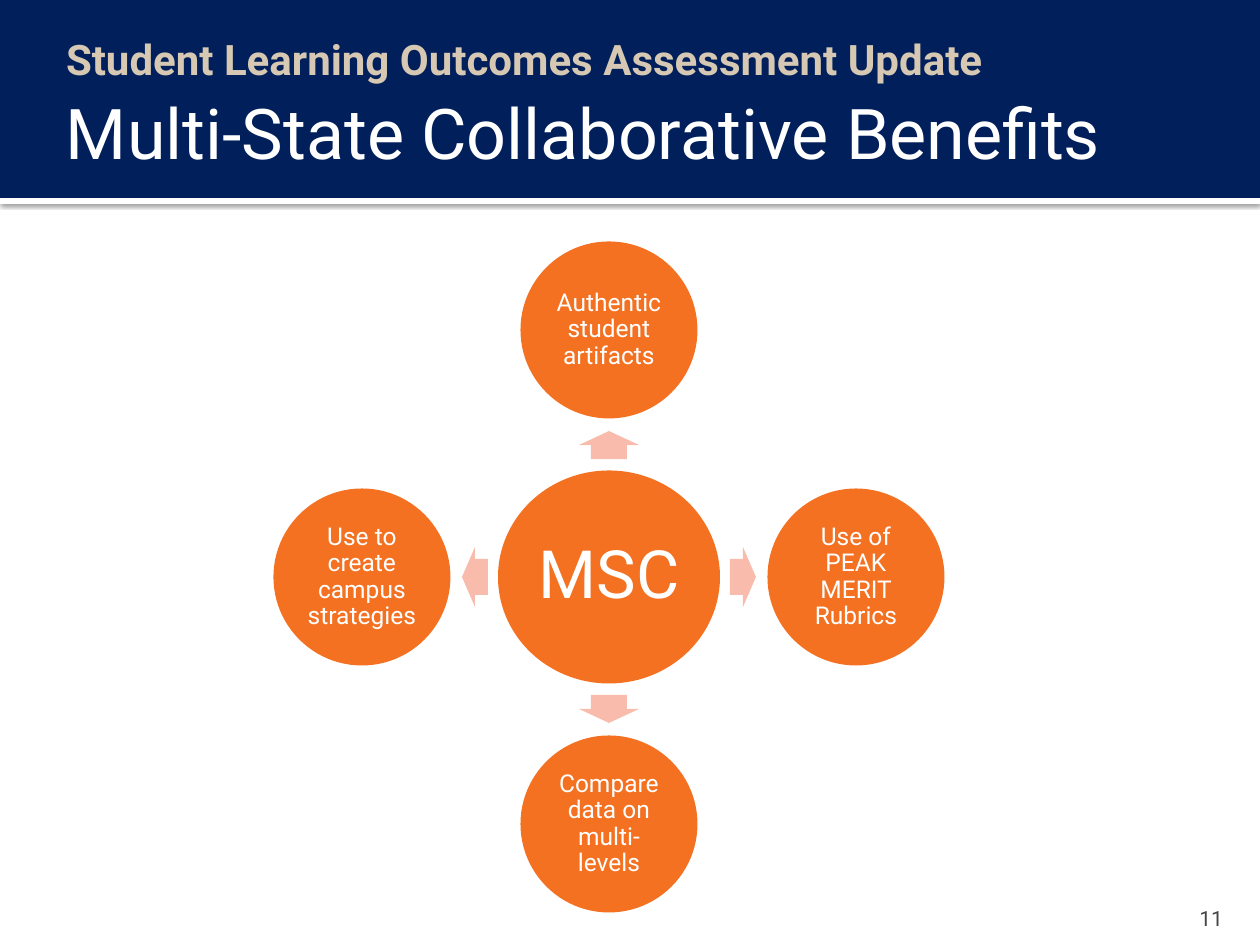
"""Build the Multi-State Collaborative benefits slide."""
from dataclasses import dataclass

from pptx import Presentation
from pptx.dml.color import RGBColor
from pptx.enum.shapes import MSO_SHAPE
from pptx.enum.text import MSO_ANCHOR, PP_ALIGN
from pptx.oxml import parse_xml
from pptx.util import Emu, Pt

RECT, OVAL, ARROW = MSO_SHAPE.RECTANGLE, MSO_SHAPE.OVAL, MSO_SHAPE.RIGHT_ARROW
TOP, MIDDLE, BOTTOM = MSO_ANCHOR.TOP, MSO_ANCHOR.MIDDLE, MSO_ANCHOR.BOTTOM
LEFT, CENTER, RIGHT = PP_ALIGN.LEFT, PP_ALIGN.CENTER, PP_ALIGN.RIGHT
EMU_PER_PX = 914400 / 126
WIDTH, HEIGHT = 1260, 945
SHADOW = (
    '<a:effectLst xmlns:a="http://schemas.openxmlformats.org/drawingml/2006/main">'
    '<a:outerShdw blurRad="31750" dist="10160" dir="5400000" rotWithShape="0">'
    '<a:srgbClr val="000000"><a:alpha val="60000"/></a:srgbClr>'
    '</a:outerShdw></a:effectLst>'
)


@dataclass(frozen=True)
class Theme:
    font: str = "Roboto"
    navy: str = "001F5B"
    white: str = "FFFFFF"
    sand: str = "D6C8B2"
    grey: str = "454545"
    orange: str = "F37121"
    peach: str = "F8BBAC"
    title: int = 40
    hub: int = 38
    kicker: int = 24
    label: int = 14
    number: int = 12


def px(n):
    return Emu(round(n * EMU_PER_PX))


def write(sp, text, font, size, color, bold=False, align=LEFT, anchor=MIDDLE,
          insets=(0, 0, 0, 0), spacing=None):
    tf = sp.text_frame
    tf.word_wrap = True
    tf.vertical_anchor = anchor
    tf.margin_left, tf.margin_top, tf.margin_right, tf.margin_bottom = map(px, insets)
    p = tf.paragraphs[0]
    p.alignment = align
    if spacing:
        p.line_spacing = spacing
    r = p.add_run()
    r.text = text
    r.font.name, r.font.size, r.font.bold = font, Pt(size), bold
    r.font.color.rgb = RGBColor.from_string(color)


class Deck:
    def __init__(self, theme):
        self.theme = theme
        self.prs = Presentation()
        self.prs.slide_width, self.prs.slide_height = px(WIDTH), px(HEIGHT)
        self.s = self.prs.slides.add_slide(self.prs.slide_layouts[6])

    def shape(self, kind, x, y, w, h, color):
        sp = self.s.shapes.add_shape(kind, px(x), px(y), px(w), px(h))
        sp.shadow.inherit = False
        sp.fill.solid()
        sp.fill.fore_color.rgb = RGBColor.from_string(color)
        sp.line.fill.background()
        return sp

    def shadowed_rule(self, y, h):
        sp = self.shape(RECT, 0, y, WIDTH, h, self.theme.white)
        pr = sp.element.spPr
        pr.replace(pr.find("{*}effectLst"), parse_xml(SHADOW))

    def text(self, x, y, w, h, text, size, color, **style):
        sp = self.s.shapes.add_textbox(px(x), px(y), px(w), px(h))
        write(sp, text, self.theme.font, size, color, **style)

    def circle(self, cx, cy, w, h, text, size, inset):
        sp = self.shape(OVAL, cx - w / 2, cy - h / 2, w, h, self.theme.orange)
        write(sp, text, self.theme.font, size, self.theme.white, align=CENTER,
              insets=(inset,) * 4, spacing=0.9)

    def arrow(self, cx, cy, length, breadth, angle):
        sp = self.shape(ARROW, cx - length / 2, cy - breadth / 2, length, breadth,
                        self.theme.peach)
        sp.adjustments[0], sp.adjustments[1] = 0.6, 0.5
        sp.rotation = angle


def main():
    t = Theme()
    deck = Deck(t)
    deck.shadowed_rule(198, 6)
    deck.shape(RECT, 0, 0, WIDTH, 198, t.navy)
    deck.text(42, 21, 1177, 63, "Student Learning Outcomes Assessment Update",
              t.kicker, t.sand, bold=True, anchor=TOP, insets=(24, 13, 13, 6))
    deck.text(53, 74, 1155, 116, "Multi-State Collaborative Benefits",
              t.title, t.white, insets=(13, 6, 6, 6))
    deck.text(1135, 893, 101, 38, "11", t.number, t.grey, align=RIGHT,
              anchor=BOTTOM, insets=(13, 6, 13, 0))

    cx, cy, reach, spoke = 609, 577, 247, 177
    deck.circle(cx, cy, 222, 213, "MSC", t.hub, 6)
    benefits = [
        ("Authentic student artifacts", 0, -1, 270),
        ("Use of PEAK MERIT Rubrics", 1, 0, 0),
        ("Compare data on multi-levels", 0, 1, 90),
        ("Use to create campus strategies", -1, 0, 180),
    ]
    for text, dx, dy, angle in benefits:
        gap, length = (134, 26) if dx else (132, 28)
        deck.arrow(cx + dx * gap, cy + dy * gap, length, 60, angle)
        deck.circle(cx + dx * reach, cy + dy * reach, spoke, spoke, text, t.label, 2)

    deck.prs.save("out.pptx")


if __name__ == "__main__":
    main()
